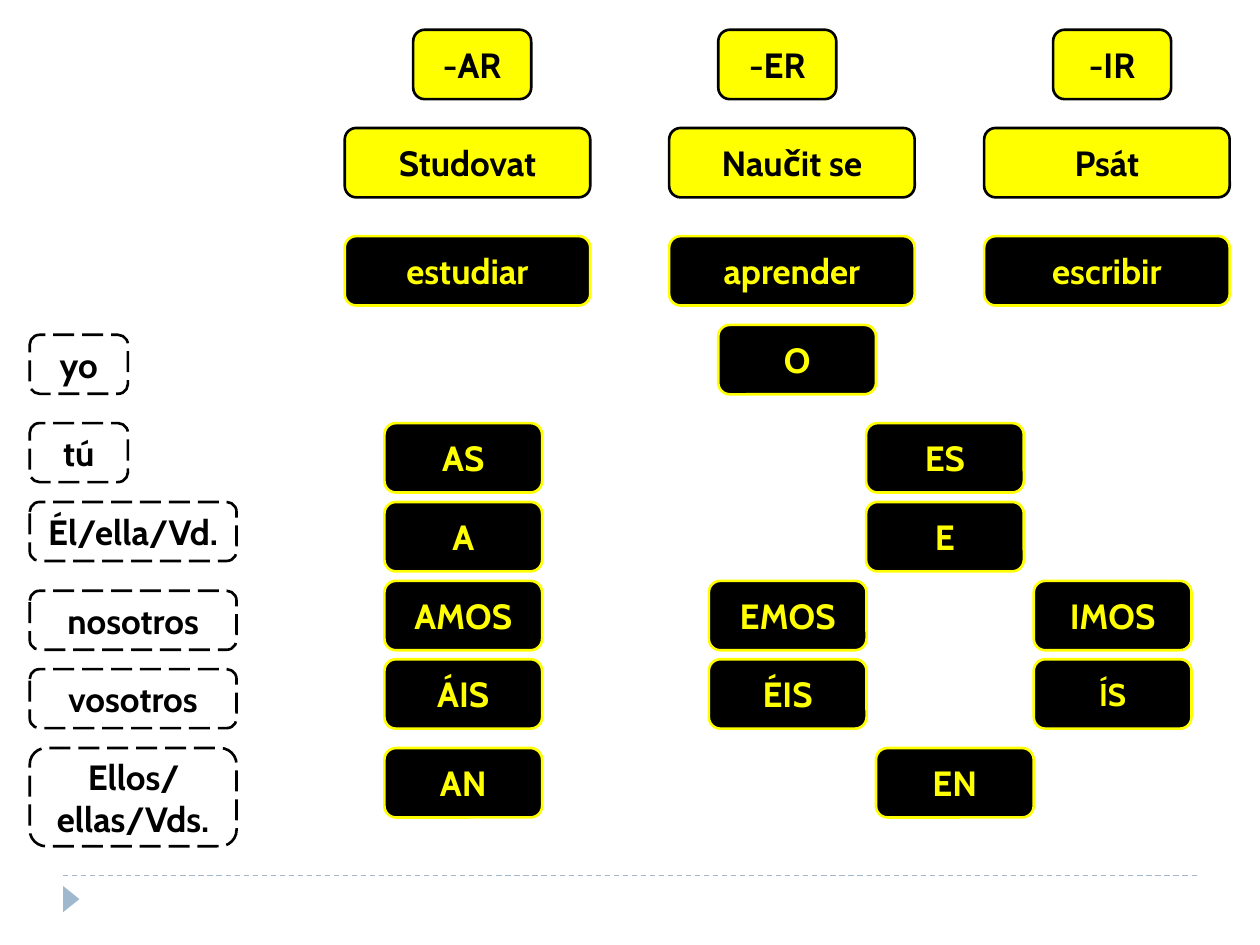
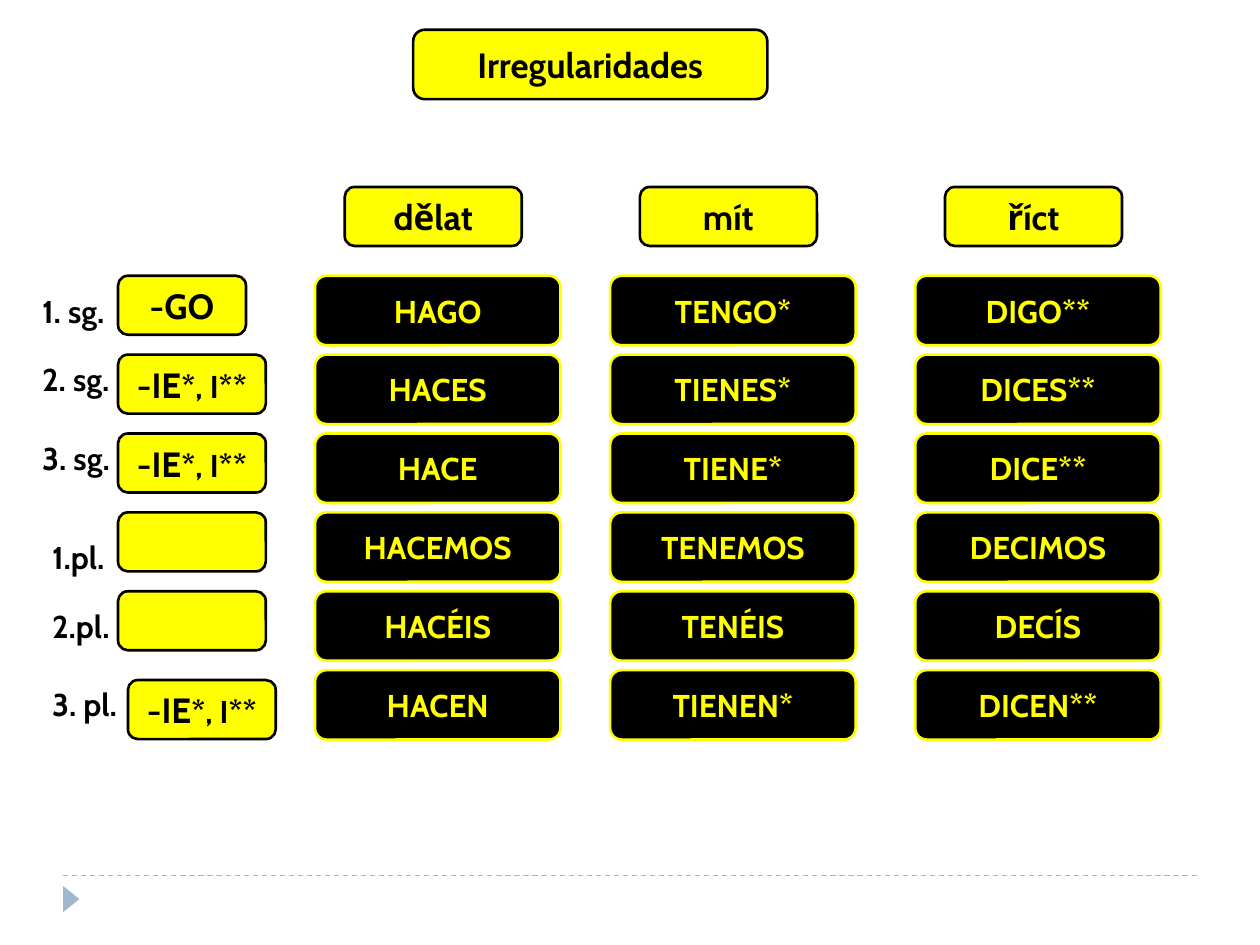
from dataclasses import dataclass

from lxml import etree
from pptx import Presentation
from pptx.dml.color import RGBColor
from pptx.enum import dml, shapes, text as txt
from pptx.oxml import ns
from pptx.util import Cm, Pt

FONT = "Cabin"
HUES = {"black": "000000", "yellow": "FFFF00", "white": "FFFFFF", "blue": "9FB8CD"}
WIDE, TALL, LOW = 4.95, 1.4, 1.19  # usual card width and heights, cm


@dataclass(frozen=True)
class Look:
    fill: str
    line: str
    ink: str
    dash: bool = False


HEAD = Look("yellow", "black", "black")
VERB = Look("black", "yellow", "yellow")
WHO = Look("white", "black", "black", dash=True)


@dataclass(frozen=True)
class Person:
    name: str
    top: float
    width: float
    end_top: float
    ends: tuple  # (left, ending) pairs
    height: float = LOW


@dataclass(frozen=True)
class Form:
    label: str
    left: float
    top: float
    rule: tuple  # (text, size) runs
    verbs: tuple
    rule_left: float = 2.38
    rule_width: float = 2.98
    rule_drop: float = 0


STEM = (("-IE", 20), ("*, I**", 18))

PEOPLE = (
    Person("yo", 6.75, 1.98, 6.55, ((14.48, "O"),)),
    Person("tú", 8.53, 1.98, 8.53, ((7.75, "AS"), (17.46, "ES"))),
    Person("Él/ella/Vd.", 10.12, 4.17, 10.12, ((7.75, "A"), (17.46, "E"))),
    Person("nosotros", 11.91, 4.17, 11.71,
           ((7.75, "AMOS"), (14.29, "EMOS"), (20.84, "IMOS"))),
    Person("vosotros", 13.49, 4.17, 13.29,
           ((7.75, "ÁIS"), (14.29, "ÉIS"), (20.84, "ÍS"))),
    Person("Ellos/ellas/Vds.", 15.08, 4.17, 15.08,
           ((7.75, "AN"), (17.66, "EN")), height=1.98),
)

FORMS = (
    Form("1. sg.", 0.6, 5.76, (("-GO", 20),), ("HAGO", "TENGO*", "DIGO**"),
         rule_width=2.58),
    Form("2. sg.", 0.6, 7.14, STEM, ("HACES", "TIENES*", "DICES**")),
    Form("3. sg.", 0.6, 8.73, STEM, ("HACE", "TIENE*", "DICE**")),
    Form("1.pl.", 0.8, 10.72, (), ("HACEMOS", "TENEMOS", "DECIMOS")),
    Form("2.pl.", 0.8, 12.12, (), ("HACÉIS", "TENÉIS", "DECÍS")),
    Form("3. pl.", 0.8, 13.69, STEM, ("HACEN", "TIENEN*", "DICEN**"),
         rule_left=2.58, rule_drop=0.2),
)


def hue(name: str) -> RGBColor:
    return RGBColor.from_string(HUES[name])


def write(shape, runs, *, size=20, ink="black", mid=True, wrap=True) -> None:
    """Fill a shape with bold text, given as a string or (text, size) runs."""
    frame = shape.text_frame
    frame.word_wrap = wrap
    frame.auto_size = txt.MSO_AUTO_SIZE.NONE if wrap else txt.MSO_AUTO_SIZE.SHAPE_TO_FIT_TEXT
    frame.vertical_anchor = txt.MSO_ANCHOR.MIDDLE if mid else txt.MSO_ANCHOR.TOP
    para = frame.paragraphs[0]
    para.alignment = txt.PP_ALIGN.CENTER if mid else txt.PP_ALIGN.LEFT
    for part, points in ((runs, size),) if isinstance(runs, str) else runs:
        run = para.add_run()
        run.text = part
        font = run.font
        font.name, font.size, font.bold = FONT, Pt(points), True
        font.color.rgb = hue(ink)


def card(slide, runs, left, top, width=WIDE, height=TALL, look=VERB, size=20) -> None:
    box = slide.shapes.add_shape(shapes.MSO_SHAPE.ROUNDED_RECTANGLE,
                                 Cm(left), Cm(top), Cm(width), Cm(height))
    box.shadow.inherit = False
    box.fill.solid()
    box.fill.fore_color.rgb = hue(look.fill)
    box.line.color.rgb = hue(look.line)
    box.line.width = Pt(1.5)
    if look.dash:
        box.line.dash_style = dml.MSO_LINE.LONG_DASH
    if runs:
        write(box, runs, size=size, ink=look.ink)


def footer(slide) -> None:
    rule = slide.shapes.add_connector(shapes.MSO_CONNECTOR.STRAIGHT,
                                      Cm(1.27), Cm(17.65), Cm(24.13), Cm(17.65))
    rule.line.color.rgb = hue("blue")
    rule.line.width = Pt(0.75)
    rule.line.dash_style = dml.MSO_LINE.DASH
    etree.SubElement(rule.element.spPr, ns.qn("a:effectLst"))
    mark = slide.shapes.add_shape(shapes.MSO_SHAPE.ISOSCELES_TRIANGLE,
                                  Cm(1.17), Cm(17.96), Cm(0.53), Cm(0.33))
    mark.rotation = 90
    mark.shadow.inherit = False
    mark.fill.solid()
    mark.fill.fore_color.rgb = hue("blue")
    mark.line.fill.background()


def regular(deck) -> None:
    slide = deck.slides.add_slide(deck.slide_layouts[6])
    footer(slide)
    # Verb groups, one column each
    for left, end_left, end, czech, verb in (
        (6.95, 8.33, "-AR", "Studovat", "estudiar"),
        (13.49, 14.48, "-ER", "Naučit se", "aprender"),
        (19.84, 21.23, "-IR", "Psát", "escribir"),
    ):
        card(slide, end, end_left, 0.6, width=2.38, look=HEAD)
        card(slide, czech, left, 2.58, look=HEAD)
        card(slide, verb, left, 4.76)
    # Persons and their endings
    for who in PEOPLE:
        card(slide, who.name, 0.6, who.top, who.width, who.height, WHO)
        for left, end in who.ends:
            card(slide, end, left, who.end_top, width=3.18,
                 size=18 if end == "ÍS" else 20)


def irregular(deck) -> None:
    slide = deck.slides.add_slide(deck.slide_layouts[5])
    footer(slide)
    # Title on its plate
    spot = (8.33, 0.6, 7.14, TALL)
    card(slide, "", *spot, look=HEAD)
    title = slide.shapes.title
    title.left, title.top, title.width, title.height = map(Cm, spot)
    write(title, "Irregularidades")
    slide.shapes._spTree.append(title.element)
    # Column heads
    lefts = (6.35, 12.3, 18.45)
    for left, czech in zip(lefts, ("dělat", "mít", "říct")):
        card(slide, czech, left + 0.6, 3.77, 3.57, LOW, HEAD)
    # Verb forms, one row per person
    for row, form in enumerate(FORMS):
        top = 5.56 + 1.59 * row
        card(slide, form.rule, form.rule_left, top + form.rule_drop,
             form.rule_width, LOW, HEAD)
        label = slide.shapes.add_textbox(Cm(form.left), Cm(form.top), Cm(1.9), Cm(1.02))
        write(label, form.label, size=18, mid=False, wrap=False)
        for left, verb in zip(lefts, form.verbs):
            card(slide, verb, left, top, size=18)


def main() -> None:
    deck = Presentation()
    deck.slide_width, deck.slide_height = Cm(25.4), Cm(19.05)
    regular(deck)
    irregular(deck)
    deck.save("out.pptx")


if __name__ == "__main__":
    main()
